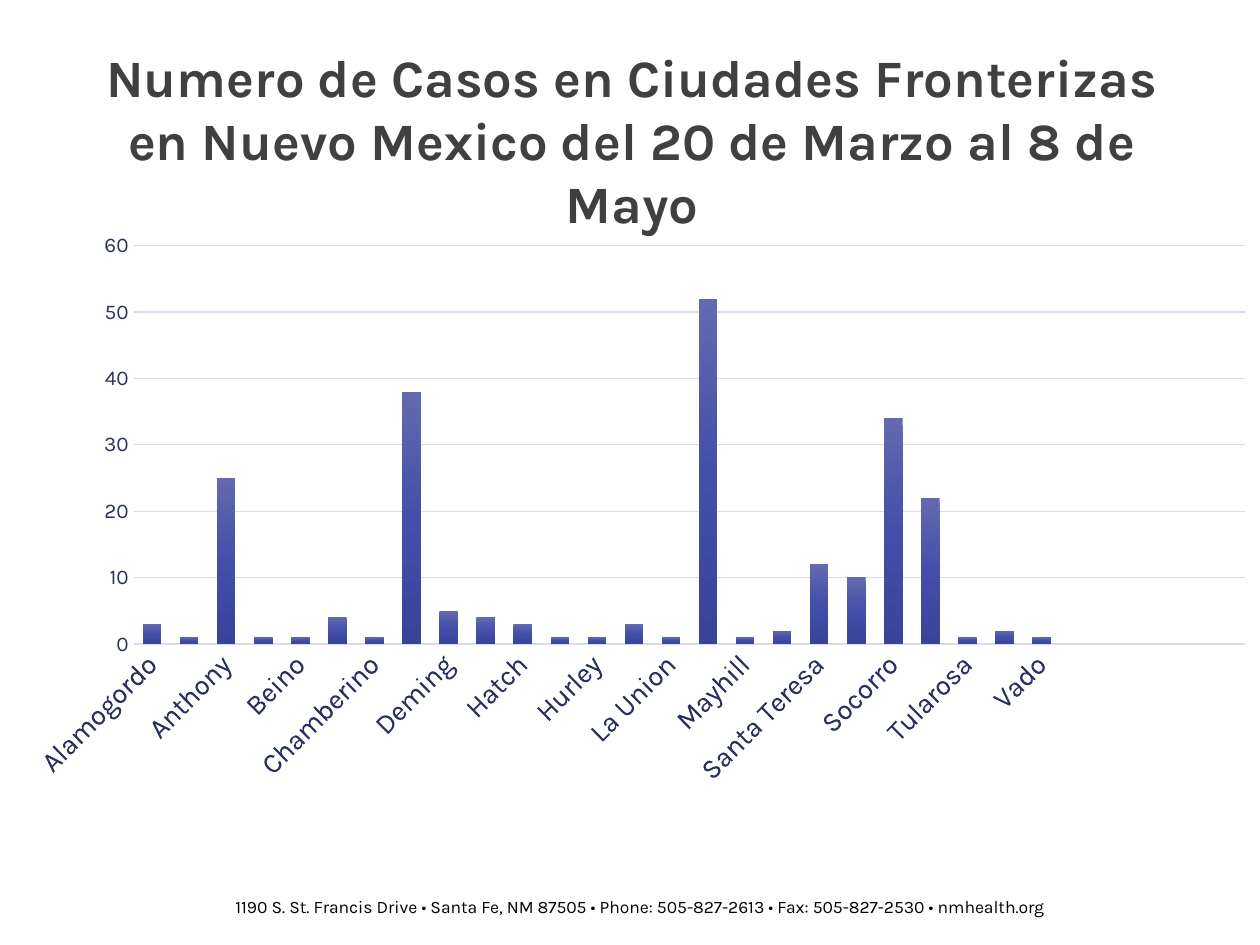
from dataclasses import dataclass

from lxml.etree import SubElement
from pptx import Presentation
from pptx.chart.data import CategoryChartData
from pptx.dml.color import RGBColor
from pptx.enum.chart import XL_CHART_TYPE, XL_TICK_MARK
from pptx.enum.text import MSO_AUTO_SIZE, PP_ALIGN
from pptx.oxml.ns import qn
from pptx.util import Inches, Pt


@dataclass(frozen=True)
class Theme:
    font: str = "Karla"
    title_color: str = "404040"
    text_color: str = "000000"
    axis_color: str = "2A315F"
    grid_color: str = "D8DBEE"
    bar_stops: tuple = ((0, "636AAF"), (50, "444FA9"), (100, "39439A"))
    title_size: int = 30
    category_size: int = 16
    value_size: int = 12
    small_size: int = 10


@dataclass(frozen=True)
class TextBlock:
    text: str
    left: float
    top: float
    width: float
    height: float
    size: int
    color: str
    bold: bool = False
    align: PP_ALIGN = PP_ALIGN.LEFT


THEME = Theme()

TEXT_BLOCKS = (
    TextBlock("1190 S. St. Francis Drive • Santa Fe, NM 87505 • Phone: 505-827-2613 "
              "• Fax: 505-827-2530 • nmhealth.org",
              1.77, 7.06, 8.2, 0.27, THEME.small_size, THEME.text_color),
    TextBlock("Numero de Casos en Ciudades Fronterizas en Nuevo Mexico "
              "del 20 de Marzo al 8 de Mayo",
              0.74, 0.31, 8.55, 1.11, THEME.title_size, THEME.title_color,
              True, PP_ALIGN.CENTER),
)

CASES = {
    "Alamogordo": 3, "Almogordo": 1, "Anthony": 25, "Arenas Valley": 1,
    "Beino": 1, "Berino": 4, "Chamberino": 1, "Chaparral": 38, "Deming": 5,
    "Dona Ana": 4, "Hatch": 3, "Holloman Air Force": 1, "Hurley": 1,
    "La Mesa": 3, "La Union": 1, "Las Cruces": 52, "Mayhill": 1,
    "Mesquite": 2, "Santa Teresa": 12, "Silver City": 10, "Socorro": 34,
    "Sunland Park": 22, "Tularosa": 1, "Union": 2, "Vado": 1,
}
EMPTY_SLOTS = 5
PLOT_AREA = {"x": 0.074, "y": 0.03, "w": 0.93, "h": 0.68}


def style_font(font, size: int, color: str, bold: bool = False) -> None:
    font.name = THEME.font
    font.size = Pt(size)
    font.bold = bold
    font.color.rgb = RGBColor.from_string(color)


def style_line(line) -> None:
    line.width = Pt(0.75)
    line.color.rgb = RGBColor.from_string(THEME.grid_color)


def add_text(slide, block: TextBlock) -> None:
    box = slide.shapes.add_textbox(Inches(block.left), Inches(block.top),
                                   Inches(block.width), Inches(block.height))
    frame = box.text_frame
    frame.word_wrap = True
    frame.auto_size = MSO_AUTO_SIZE.SHAPE_TO_FIT_TEXT
    frame.text = block.text
    para = frame.paragraphs[0]
    para.alignment = block.align
    style_font(para.runs[0].font, block.size, block.color, block.bold)


def fill_bars(series) -> None:
    """Give the bars a vertical gradient with three stops."""
    series.format.fill.gradient()
    gradient = series._element.spPr.find(qn("a:gradFill"))
    for child in list(gradient):
        gradient.remove(child)
    stops = SubElement(gradient, qn("a:gsLst"))
    for percent, color in THEME.bar_stops:
        stop = SubElement(stops, qn("a:gs"), pos=str(percent * 1000))
        SubElement(stop, qn("a:srgbClr"), val=color)
    SubElement(gradient, qn("a:lin"), ang="5400000", scaled="0")


def place_plot(chart) -> None:
    """Fix the inner plot area as fractions of the chart."""
    plot_area = chart._chartSpace.chart.plotArea
    layout = plot_area.find(qn("c:layout"))
    if layout is None:
        layout = plot_area.makeelement(qn("c:layout"))
        plot_area.insert(0, layout)
    manual = SubElement(layout, qn("c:manualLayout"))
    settings = {"layoutTarget": "inner", "xMode": "edge", "yMode": "edge", **PLOT_AREA}
    for name, value in settings.items():
        SubElement(manual, qn(f"c:{name}"), val=str(value))


def style_axis(axis, size: int) -> None:
    axis.major_tick_mark = XL_TICK_MARK.NONE
    axis.minor_tick_mark = XL_TICK_MARK.NONE
    style_font(axis.tick_labels.font, size, THEME.axis_color)


def add_case_chart(slide) -> None:
    data = CategoryChartData()
    data.categories = [*CASES, *[""] * EMPTY_SLOTS]
    data.add_series("Series 1", [*CASES.values(), *[None] * EMPTY_SLOTS])
    chart = slide.shapes.add_chart(XL_CHART_TYPE.COLUMN_CLUSTERED, Inches(0.28),
                                   Inches(1.81), Inches(9.61), Inches(4.65), data).chart
    chart.has_title = False
    chart.has_legend = False
    style_font(chart.font, THEME.small_size, THEME.text_color)
    place_plot(chart)

    plot = chart.plots[0]
    plot.gap_width = 100
    plot.overlap = -24
    plot.vary_by_categories = False
    fill_bars(plot.series[0])

    cities = chart.category_axis
    style_axis(cities, THEME.category_size)
    style_line(cities.format.line)
    cities._element.find(qn("c:txPr")).find(qn("a:bodyPr")).set("rot", "-2700000")

    counts = chart.value_axis
    style_axis(counts, THEME.value_size)
    counts.minimum_scale, counts.maximum_scale, counts.major_unit = 0, 60, 10
    counts.format.line.fill.background()
    style_line(counts.major_gridlines.format.line)


def main() -> None:
    deck = Presentation()
    deck.slide_width, deck.slide_height = Inches(10), Inches(7.5)
    page = deck.slides.add_slide(deck.slide_layouts[6])
    for block in TEXT_BLOCKS:
        add_text(page, block)
    add_case_chart(page)
    deck.save("out.pptx")


if __name__ == "__main__":
    main()
